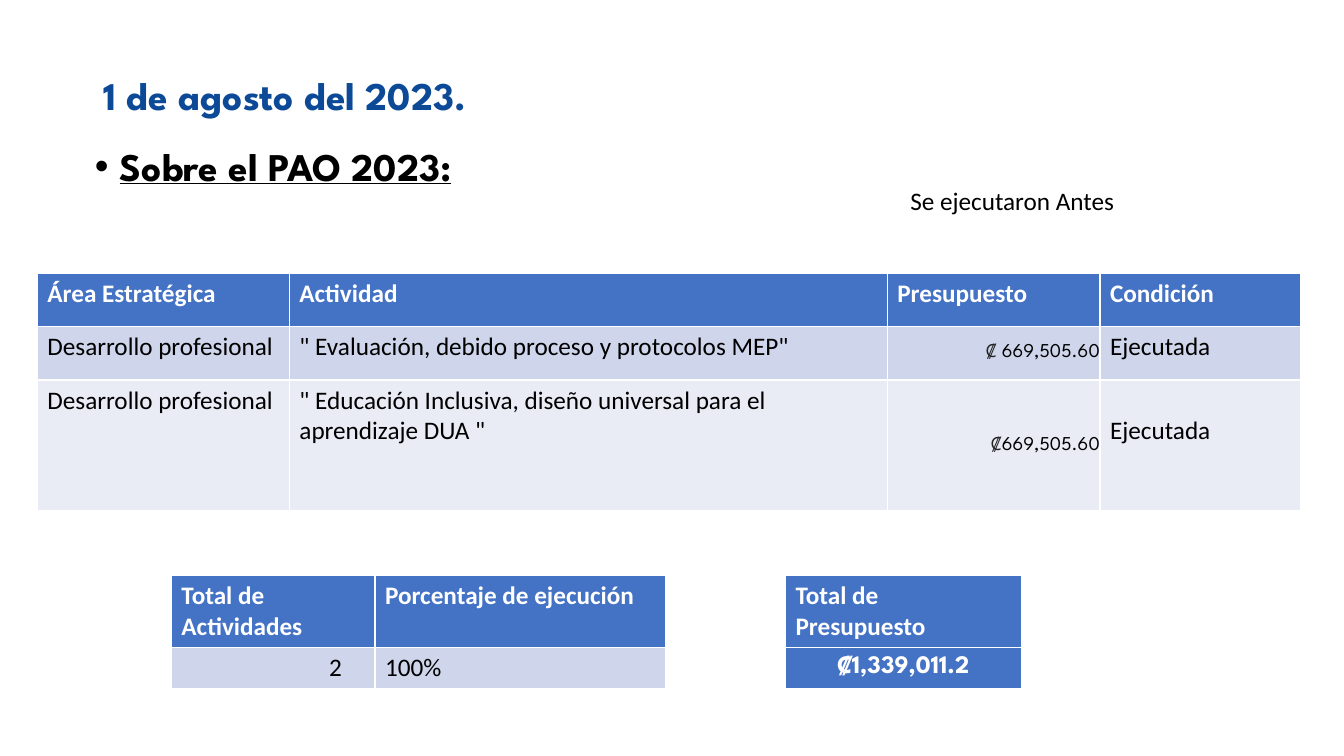
from pptx import Presentation
from pptx.dml.color import RGBColor
from pptx.enum.text import MSO_ANCHOR as Anchor, MSO_AUTO_SIZE as AutoSize, PP_ALIGN as Align
from pptx.oxml.ns import qn
from pptx.util import Inches, Pt
from lxml import etree

HEADER, BAND, LIGHT = "4472C4", "CFD5EA", "E9EBF5"
WHITE, BLACK, NAVY, GREY = "FFFFFF", "000000", "0C4A97", "262626"
SANS, DISPLAY = "Calibri", "League Spartan"


def style(paragraph, font, size, color, bold=False):
    paragraph.font.name = font
    paragraph.font.size = Pt(size)
    paragraph.font.bold = bold
    paragraph.font.color.rgb = RGBColor.from_string(color)


def build_table(left, top, widths, heights, rows, fills):
    table = slide.shapes.add_table(
        len(rows), len(widths), Inches(left), Inches(top),
        Inches(sum(widths)), Inches(sum(heights))).table
    for column, width in zip(table.columns, widths):
        column.width = Inches(width)
    for r, (texts, fill) in enumerate(zip(rows, fills)):
        table.rows[r].height = Inches(heights[r])
        for c, text in enumerate(texts):
            cell = table.cell(r, c)
            cell.fill.solid()
            cell.fill.fore_color.rgb = RGBColor.from_string(fill)
            cell.text = text
            is_header = fill == HEADER
            style(cell.text_frame.paragraphs[0], SANS, 18,
                  WHITE if is_header else BLACK, is_header)
    return table


prs = Presentation()
prs.slide_width, prs.slide_height = Inches(13.33), Inches(7.5)
slide = prs.slides.add_slide(prs.slide_layouts[1])

# Date and topic
date, topic = slide.placeholders
for holder, text, color, (left, top, width, height) in (
        (date, "1 de agosto del 2023.", NAVY, (0.93, 0.71, 11.5, 0.53)),
        (topic, "Sobre el PAO 2023:", BLACK, (0.84, 1.41, 11.5, 5.51))):
    holder.left, holder.top = Inches(left), Inches(top)
    holder.width, holder.height = Inches(width), Inches(height)
    holder.text_frame.text = text
    holder.text_frame.auto_size = AutoSize.NONE
    line = holder.text_frame.paragraphs[0]
    line.alignment = Align.LEFT
    line.line_spacing = 0.9
    line.space_before = Pt(0)
    if holder is topic:
        props = line._p.get_or_add_pPr()
        props.set("marL", str(Inches(0.25)))
        props.set("indent", str(-Inches(0.25)))
        etree.SubElement(props, qn("a:buFont")).set("typeface", "Arial")
        etree.SubElement(props, qn("a:buChar")).set("char", "•")
        line.font.underline = True
    style(line, DISPLAY, 28, color, True)

# Activities
activities = build_table(
    0.37, 2.71, [2.5, 5.93, 2.11, 1.99], [0.53, 0.53, 1.3],
    [["Área Estratégica", "Actividad", "Presupuesto", "Condición"],
     ["Desarrollo profesional", '" Evaluación, debido proceso y protocolos MEP"',
      "", "Ejecutada"],
     ["Desarrollo profesional",
      '" Educación Inclusiva, diseño universal para el aprendizaje DUA "',
      "", "Ejecutada"]],
    [HEADER, BAND, LIGHT])
activities.cell(2, 3).margin_top = Inches(0.35)

# Totals
totals = build_table(
    1.7, 5.71, [2.02, 2.88], [0.7, 0.41],
    [["Total de Actividades", "Porcentaje de ejecución"], ["2", "100%"]],
    [HEADER, BAND])
count = totals.cell(1, 0)
count.margin_right = Inches(0.33)
count.text_frame.paragraphs[0].alignment = Align.RIGHT

build_table(7.79, 5.71, [2.34], [0.7], [["Total de Presupuesto"]], [HEADER])
budget_total = build_table(7.79, 6.42, [2.34], [0.41], [["₡1,339,011.2"]], [HEADER]).cell(0, 0)

# Money cells: no insets, centred vertically
budgets = [activities.cell(1, 2), activities.cell(2, 2)]
for cell in [*budgets, budget_total]:
    cell.vertical_anchor = Anchor.MIDDLE
    cell.margin_left = cell.margin_top = cell.margin_right = cell.margin_bottom = 0
for cell, sign in zip(budgets, ("₡ ", "₡")):
    amount = cell.text_frame.paragraphs[0]
    amount.alignment = Align.RIGHT
    style(amount, DISPLAY, 14, BLACK)
    for text, color in ((sign, GREY), ("669,505.60", BLACK)):
        run = amount.add_run()
        run.text = text
        run.font.color.rgb = RGBColor.from_string(color)
total_amount = budget_total.text_frame.paragraphs[0]
total_amount.alignment = Align.CENTER
style(total_amount, DISPLAY, 18, WHITE, True)

# Side note
note = slide.shapes.add_textbox(Inches(8.93), Inches(1.79), Inches(2.82), Inches(0.4)).text_frame
note.word_wrap = True
note.auto_size = AutoSize.SHAPE_TO_FIT_TEXT
note.text = "Se ejecutaron Antes"
style(note.paragraphs[0], SANS, 18, BLACK)

prs.save("out.pptx")
